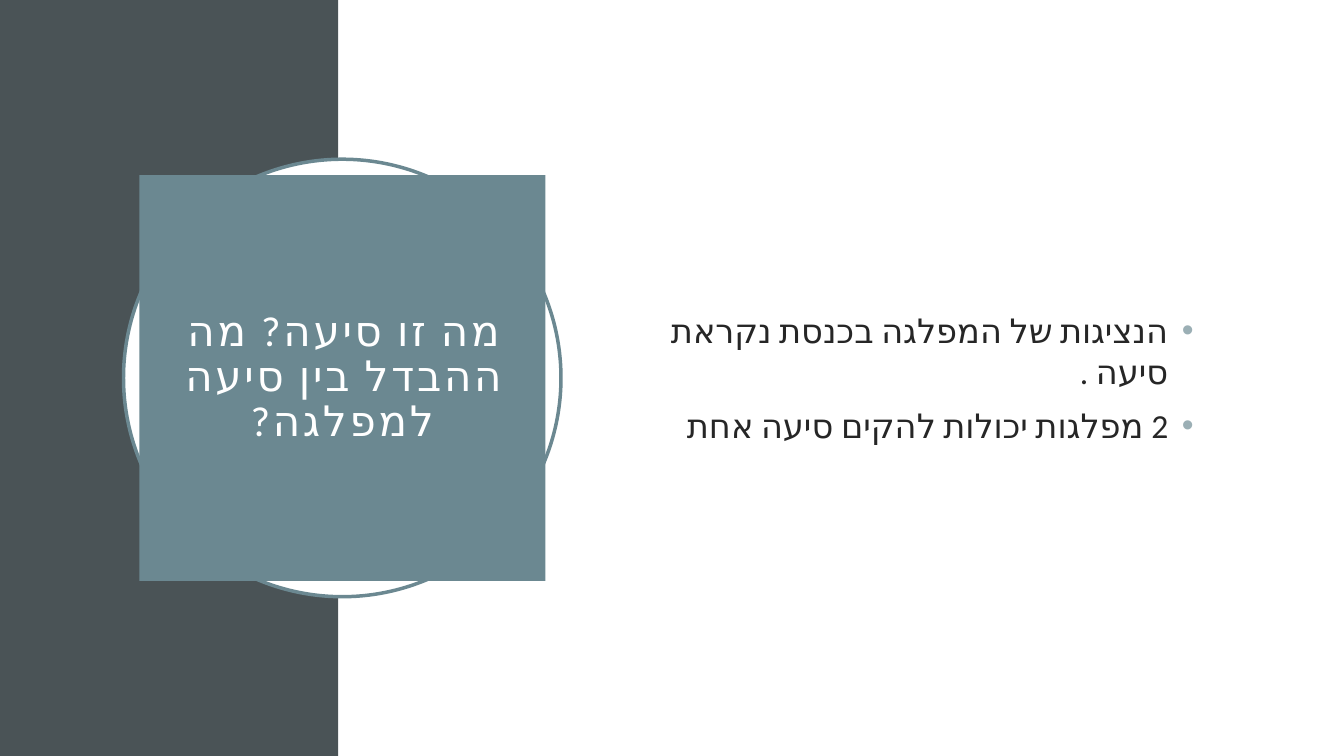
"""Builds a right-to-left slide with a title panel and two bullet points."""
from lxml import etree
from pptx import Presentation
from pptx.dml.color import RGBColor
from pptx.enum.shapes import MSO_SHAPE
from pptx.enum.text import MSO_ANCHOR, PP_ALIGN
from pptx.oxml.ns import qn
from pptx.util import Pt

RECT, OVAL = MSO_SHAPE.RECTANGLE, MSO_SHAPE.OVAL
MIDDLE = MSO_ANCHOR.MIDDLE
CENTER, RIGHT = PP_ALIGN.CENTER, PP_ALIGN.RIGHT

WIDTH, HEIGHT = 960, 540
BAND = 241.7
MID_X, MID_Y = 244.5, 270
RING, PANEL = 312.5, 290


class Deck:
    font = "Calibri"
    colors = {"dark": "4A5356", "teal": "6B8891", "white": "FFFFFF",
              "ink": "262626", "dot": "9BAFB5"}

    def __init__(self, width, height):
        self.prs = Presentation()
        self.prs.slide_width, self.prs.slide_height = Pt(width), Pt(height)
        self.slide = self.prs.slides.add_slide(self.prs.slide_layouts[6])

    def color(self, name):
        return RGBColor.from_string(self.colors[name])

    def shape(self, kind, x, y, w, h, fill, line=None):
        item = self.slide.shapes.add_shape(kind, Pt(x), Pt(y), Pt(w), Pt(h))
        item.shadow.inherit = False
        item.fill.solid()
        item.fill.fore_color.rgb = self.color(fill)
        if line:
            item.line.color.rgb = self.color(line)
            item.line.width = Pt(2.5)
        else:
            item.line.fill.background()
        return item

    def center(self, kind, size, fill, line=None):
        return self.shape(kind, MID_X - size / 2, MID_Y - size / 2,
                          size, size, fill, line)

    def frame(self, item, pad=None):
        frame = item.text_frame
        frame.word_wrap = True
        frame.vertical_anchor = MIDDLE
        if pad:
            frame.margin_left = frame.margin_right = Pt(pad)
            frame.margin_top = frame.margin_bottom = Pt(pad)
        return frame

    def add_text(self, para, text, size, color, align):
        para.alignment = align
        para._p.get_or_add_pPr().set("rtl", "1")
        run = para.add_run()
        run.text = text
        run.font.name = self.font
        run.font.size = Pt(size)
        run.font.color.rgb = self.color(color)
        props = run._r.get_or_add_rPr()
        props.set("lang", "he-IL")
        etree.SubElement(props, qn("a:cs")).set("typeface", self.font)
        return props

    def title(self, item, text):
        para = self.frame(item, 14.4).paragraphs[0]
        para.line_spacing = 0.9
        self.add_text(para, text, 30, "white", CENTER).set("spc", "200")

    def bullets(self, x, y, w, h, lines):
        box = self.slide.shapes.add_textbox(Pt(x), Pt(y), Pt(w), Pt(h))
        frame = self.frame(box)
        for i, text in enumerate(lines):
            para = frame.add_paragraph() if i else frame.paragraphs[0]
            para.space_before = Pt(10)
            self.add_text(para, text, 24, "ink", RIGHT)
            props = para._p.get_or_add_pPr()
            props.set("marL", str(Pt(18)))
            props.set("indent", str(-Pt(18)))
            tint = etree.SubElement(props, qn("a:buClr"))
            etree.SubElement(tint, qn("a:srgbClr")).set("val", self.colors["dot"])
            etree.SubElement(props, qn("a:buFont")).set("typeface", "Arial")
            etree.SubElement(props, qn("a:buChar")).set("char", "•")


def main():
    deck = Deck(WIDTH, HEIGHT)
    deck.shape(RECT, 0, 0, BAND, HEIGHT, "dark")
    deck.shape(RECT, BAND, 0, WIDTH - BAND, HEIGHT, "white")
    deck.center(OVAL, RING, "white", "teal")
    panel = deck.center(RECT, PANEL, "teal")
    deck.title(panel, "מה זו סיעה? מה ההבדל בין סיעה למפלגה?")
    deck.bullets(440.6, 110.2, 419, 319, [
        "הנציגות של המפלגה בכנסת נקראת סיעה .",
        "2 מפלגות יכולות להקים סיעה אחת",
    ])
    deck.prs.save("out.pptx")


if __name__ == "__main__":
    main()
